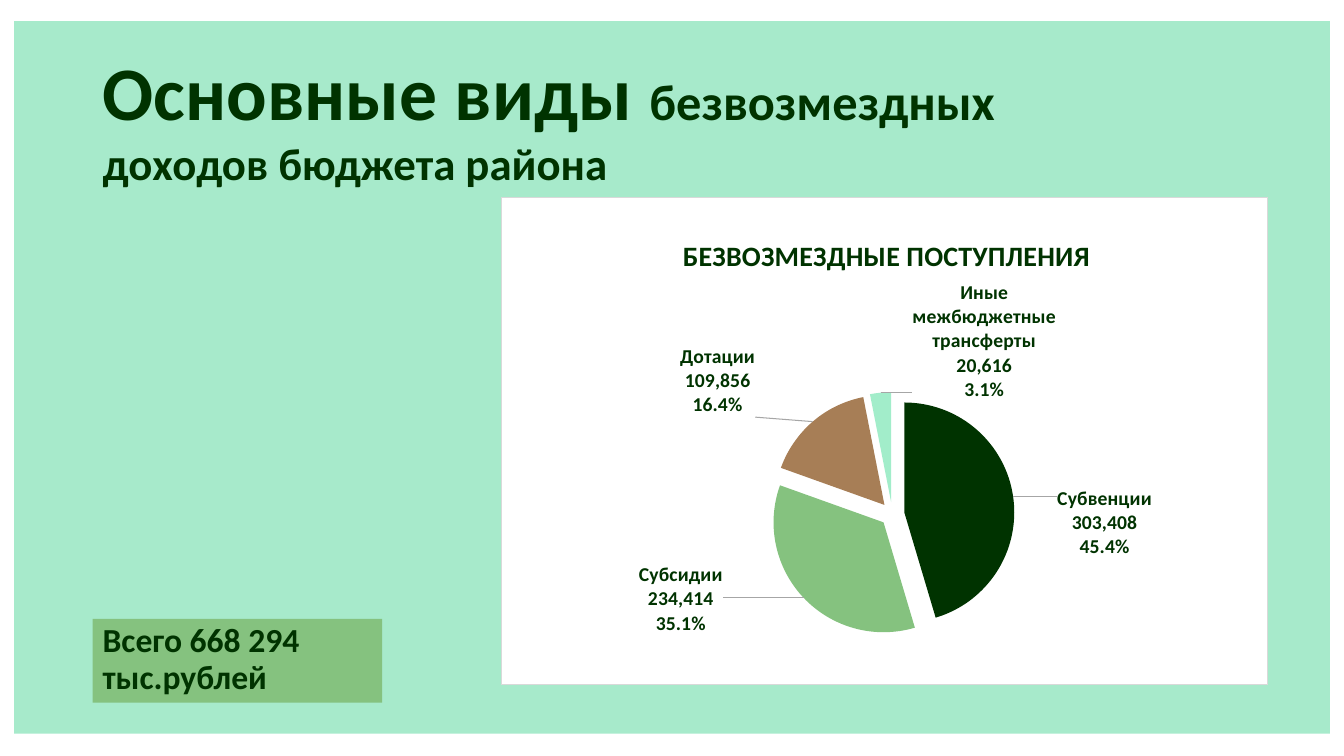
from typing import NamedTuple

from lxml import etree
from pptx import Presentation
from pptx.chart.data import CategoryChartData
from pptx.dml.color import RGBColor
from pptx.enum.chart import XL_CHART_TYPE, XL_LABEL_POSITION
from pptx.enum.shapes import MSO_SHAPE
from pptx.enum.text import MSO_ANCHOR, MSO_AUTO_SIZE, PP_ALIGN
from pptx.oxml import parse_xml
from pptx.oxml.ns import nsdecls, qn
from pptx.util import Inches, Pt

PIE = XL_CHART_TYPE.PIE
OUTSIDE_END = XL_LABEL_POSITION.OUTSIDE_END
RECT = MSO_SHAPE.RECTANGLE
TOP = MSO_ANCHOR.TOP
FIT_SHAPE = MSO_AUTO_SIZE.SHAPE_TO_FIT_TEXT
LEFT = PP_ALIGN.LEFT

WHITE = RGBColor(0xFF, 0xFF, 0xFF)
MINT = RGBColor(0xA7, 0xEA, 0xCB)
DARK = RGBColor(0x00, 0x33, 0x00)
GREEN = RGBColor(0x85, 0xC2, 0x7F)
BROWN = RGBColor(0xA7, 0x7E, 0x56)
AQUA = RGBColor(0xA2, 0xED, 0xCA)
BORDER = RGBColor(0xD9, 0xD9, 0xD9)
LEADER = RGBColor(0xA6, 0xA6, 0xA6)
FONT = "Calibri"
PERCENT = "0.0%"


class Box(NamedTuple):
    left: float
    top: float
    width: float
    height: float

    def inches(self) -> list:
        return [Inches(v) for v in self]


class Run(NamedTuple):
    text: str
    size: int


class Slice(NamedTuple):
    name: str
    value: int
    color: RGBColor
    dx: float
    dy: float


TITLE = [
    [Run("Основные виды ", 54), Run("безвозмездных", 36)],
    [Run("доходов бюджета района", 32)],
]
TOTAL = [[Run("Всего 668 294 тыс.рублей", 24)]]
SLICES = [
    Slice("Субвенции", 303408, DARK, 0.05, 0.13),
    Slice("Субсидии", 234414, GREEN, -0.1, -0.08),
    Slice("Дотации", 109856, BROWN, -0.07, 0),
    Slice("Иные межбюджетные трансферты", 20616, AQUA, 0.23, 0.03),
]


def style_font(font, size: int) -> None:
    font.name = FONT
    font.size = Pt(size)
    font.bold = True
    font.color.rgb = DARK


def add_rect(slide, box: Box, color: RGBColor):
    sp = slide.shapes.add_shape(RECT, *box.inches())
    sp.shadow.inherit = False
    sp.fill.solid()
    sp.fill.fore_color.rgb = color
    sp.line.fill.background()
    return sp


def write_text(tf, paragraphs: list[list[Run]]) -> None:
    tf.word_wrap = True
    tf.auto_size = FIT_SHAPE
    tf.vertical_anchor = TOP
    for i, runs in enumerate(paragraphs):
        p = tf.add_paragraph() if i else tf.paragraphs[0]
        p.alignment = LEFT
        for run in runs:
            r = p.add_run()
            r.text = run.text
            style_font(r.font, run.size)


def make_layout(target: str = "", edge: bool = False, **values: float):
    parts = [f'<c:layoutTarget val="{target}"/>'] if target else []
    if edge:
        parts += ['<c:xMode val="edge"/>', '<c:yMode val="edge"/>']
    parts += [f'<c:{k} val="{values[k]}"/>' for k in "xywh" if k in values]
    return parse_xml(
        f'<c:layout {nsdecls("c")}><c:manualLayout>{"".join(parts)}'
        "</c:manualLayout></c:layout>"
    )


def solid_fill(color: RGBColor) -> str:
    return f'<a:solidFill><a:srgbClr val="{color}"/></a:solidFill>'


def make_format(line: RGBColor, fill: str = ""):
    return parse_xml(
        f'<c:spPr {nsdecls("c", "a")}>{fill}'
        f'<a:ln w="9525">{solid_fill(line)}</a:ln></c:spPr>'
    )


def drop_all(parent, tag: str) -> None:
    for old in parent.findall(qn(tag)):
        parent.remove(old)


def set_label_content(labels):
    shown = {"LegendKey": 0, "Val": 1, "CatName": 1, "SerName": 0,
             "Percent": 1, "BubbleSize": 0}
    for name, flag in shown.items():
        tag = qn(f"c:show{name}")
        el = labels.find(tag)
        if el is None:
            el = etree.Element(tag)
            last.addnext(el)
        el.set("val", str(flag))
        last = el
    separator = etree.Element(qn("c:separator"))
    separator.text = "\n"
    last.addnext(separator)
    return separator


def style_slices(series) -> None:
    labels = series.data_labels
    style_font(labels.font, 14)
    labels.number_format = PERCENT
    labels.number_format_is_linked = False
    labels.position = OUTSIDE_END
    separator = set_label_content(labels._element)
    drop_all(labels._element, "c:showLeaderLines")
    show_leaders = etree.Element(qn("c:showLeaderLines"), val="1")
    separator.addnext(show_leaders)
    leaders = etree.Element(qn("c:leaderLines"))
    leaders.append(make_format(LEADER))
    show_leaders.addnext(leaders)
    for i, part in enumerate(SLICES):
        point = series.points[i]
        point.format.fill.solid()
        point.format.fill.fore_color.rgb = part.color
        style_font(point.data_label.font, 14)
        point.data_label.position = OUTSIDE_END
    for part, label in zip(SLICES, labels._element.findall(qn("c:dLbl"))):
        set_label_content(label)
        layout = make_layout(x=part.dx, y=part.dy)
        label.find(qn("c:idx")).addnext(layout)
        fmt = etree.Element(qn("c:numFmt"), formatCode=PERCENT, sourceLinked="0")
        layout.addnext(fmt)
    explosion = etree.Element(qn("c:explosion"), val="11")
    series._element.find(qn("c:dPt")).addprevious(explosion)


def add_pie(slide, box: Box) -> None:
    data = CategoryChartData(number_format="#,##0")
    data.categories = [part.name for part in SLICES]
    data.add_series("Поступления", [part.value for part in SLICES])
    chart = slide.shapes.add_chart(PIE, *box.inches(), data).chart
    chart.font.name = FONT
    chart.font.size = Pt(10)
    chart.has_legend = False
    chart.has_title = True
    r = chart.chart_title.text_frame.paragraphs[0].add_run()
    r.text = "БЕЗВОЗМЕЗДНЫЕ ПОСТУПЛЕНИЯ"
    style_font(r.font, 20)
    title = chart.chart_title._element
    drop_all(title, "c:layout")
    title.find(qn("c:tx")).addnext(make_layout(edge=True, x=0.23, y=0.07))
    chart.plots[0].vary_by_categories = True
    style_slices(chart.plots[0].series[0])

    body = chart._chartSpace.find(qn("c:chart"))
    area = body.find(qn("c:plotArea"))
    drop_all(area, "c:layout")
    area.insert(0, make_layout("inner", True, x=0.18, y=0.4, w=0.66, h=0.5))
    body.addnext(make_format(BORDER, solid_fill(WHITE)))


def main() -> None:
    prs = Presentation()
    prs.slide_width = Inches(13.33)
    prs.slide_height = Inches(7.5)
    slide = prs.slides.add_slide(prs.slide_layouts[6])
    add_rect(slide, Box(0.14, 0.21, 13.05, 7.07), MINT)
    heading = slide.shapes.add_textbox(*Box(0.92, 0.4, 12.4, 1.55).inches())
    write_text(heading.text_frame, TITLE)
    total = add_rect(slide, Box(0.92, 6.14, 2.87, 0.83), GREEN)
    write_text(total.text_frame, TOTAL)
    p = total.text_frame.paragraphs[0]
    p.line_spacing = 0.9
    p.space_before = Pt(7)
    add_pie(slide, Box(4.97, 1.95, 7.61, 4.85))
    prs.save("out.pptx")


if __name__ == "__main__":
    main()
